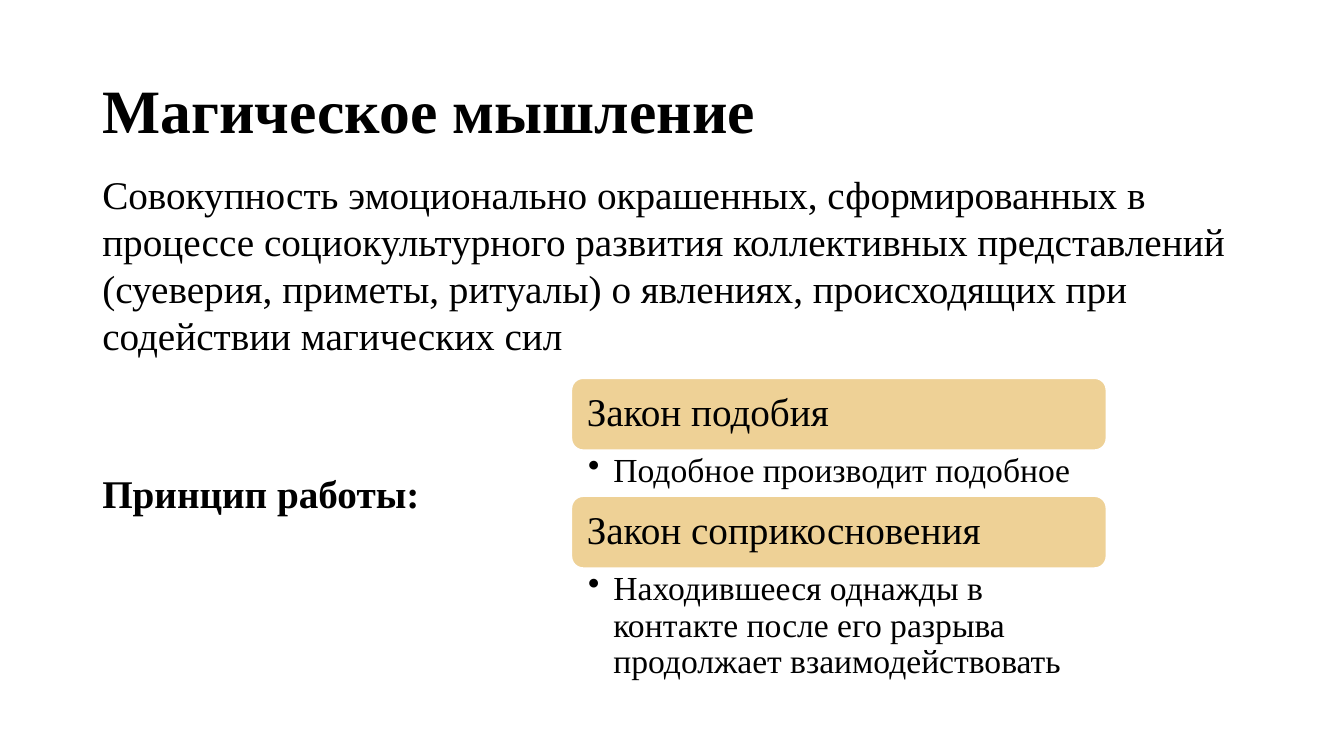
from lxml.etree import SubElement
from pptx import Presentation
from pptx.dml.color import RGBColor
from pptx.enum.shapes import MSO_SHAPE
from pptx.enum.text import MSO_ANCHOR, PP_ALIGN
from pptx.oxml.ns import qn
from pptx.util import Pt

FONT = "Times New Roman"
COLORS = {"text": "000000", "bar": "EED196", "outline": "FFFFFF"}
LAWS_LEFT, LAWS_TOP, LAWS_WIDTH = 408, 270, 382.5
BAR_HEIGHT = 51.75
LAWS = [
    ("Закон подобия", "Подобное производит подобное", 32.5),
    (
        "Закон соприкосновения",
        "Находившееся однажды в контакте после его разрыва продолжает взаимодействовать",
        79,
    ),
]


def color(name):
    return RGBColor.from_string(COLORS[name])


def set_margins(frame, left, top, right, bottom):
    frame.margin_left, frame.margin_right = Pt(left), Pt(right)
    frame.margin_top, frame.margin_bottom = Pt(top), Pt(bottom)


def write(frame, text, size, bold=False, spacing=1.0):
    """Fill the first paragraph of a frame and return it."""
    para = frame.paragraphs[0]
    para.alignment = PP_ALIGN.LEFT
    para.line_spacing = spacing
    span = para.add_run()
    span.text = text
    span.font.name = FONT
    span.font.size = Pt(size)
    span.font.bold = bold
    span.font.color.rgb = color("text")
    return para


def add_text(page, left, top, width, height, wrap=True, anchor=MSO_ANCHOR.TOP):
    """Add an empty text box and return its frame."""
    box = page.shapes.add_textbox(Pt(left), Pt(top), Pt(width), Pt(height))
    frame = box.text_frame
    frame.word_wrap = wrap
    frame.vertical_anchor = anchor
    return frame


def add_bar(page, top, text):
    bar = page.shapes.add_shape(
        MSO_SHAPE.ROUNDED_RECTANGLE, Pt(LAWS_LEFT), Pt(top), Pt(LAWS_WIDTH), Pt(BAR_HEIGHT)
    )
    bar.shadow.inherit = False
    bar.fill.solid()
    bar.fill.fore_color.rgb = color("bar")
    bar.line.color.rgb = color("outline")
    bar.line.width = Pt(1.5)
    frame = bar.text_frame
    frame.word_wrap = True
    frame.vertical_anchor = MSO_ANCHOR.MIDDLE
    # The round corners already inset the text by about 2.5 pt
    set_margins(frame, 8.64, 8.64, 8.64, 8.64)
    write(frame, text, 28, spacing=0.9)


def add_bullet(page, top, height, text):
    frame = add_text(page, LAWS_LEFT, top, LAWS_WIDTH, height)
    set_margins(frame, 12.15, 2.4, 13.6, 2.4)
    para = write(frame, text, 24, spacing=0.9)
    properties = para._p.get_or_add_pPr()
    properties.set("marL", str(Pt(18)))
    properties.set("indent", str(-Pt(18)))
    SubElement(properties, qn("a:buChar"), char="•")


def add_laws(page):
    top = LAWS_TOP
    for name, meaning, height in LAWS:
        add_bar(page, top, name)
        top += BAR_HEIGHT
        add_bullet(page, top, height, meaning)
        top += height


def main():
    deck = Presentation()
    deck.slide_width, deck.slide_height = Pt(960), Pt(540)
    page = deck.slides.add_slide(deck.slide_layouts[6])

    title = add_text(page, 66, 28.75, 828, 104.4, anchor=MSO_ANCHOR.MIDDLE)
    write(title, "Магическое мышление", 44, bold=True, spacing=0.9)

    definition = add_text(page, 66, 118, 828, 368)
    write(
        definition,
        "Совокупность эмоционально окрашенных, сформированных в процессе "
        "социокультурного развития коллективных представлений (суеверия, приметы, "
        "ритуалы) о явлениях, происходящих при содействии магических сил",
        28,
    )

    add_laws(page)

    principle = add_text(page, 66, 332, 242, 41, wrap=False)
    write(principle, "Принцип работы:", 28, bold=True)

    deck.save("out.pptx")


if __name__ == "__main__":
    main()
